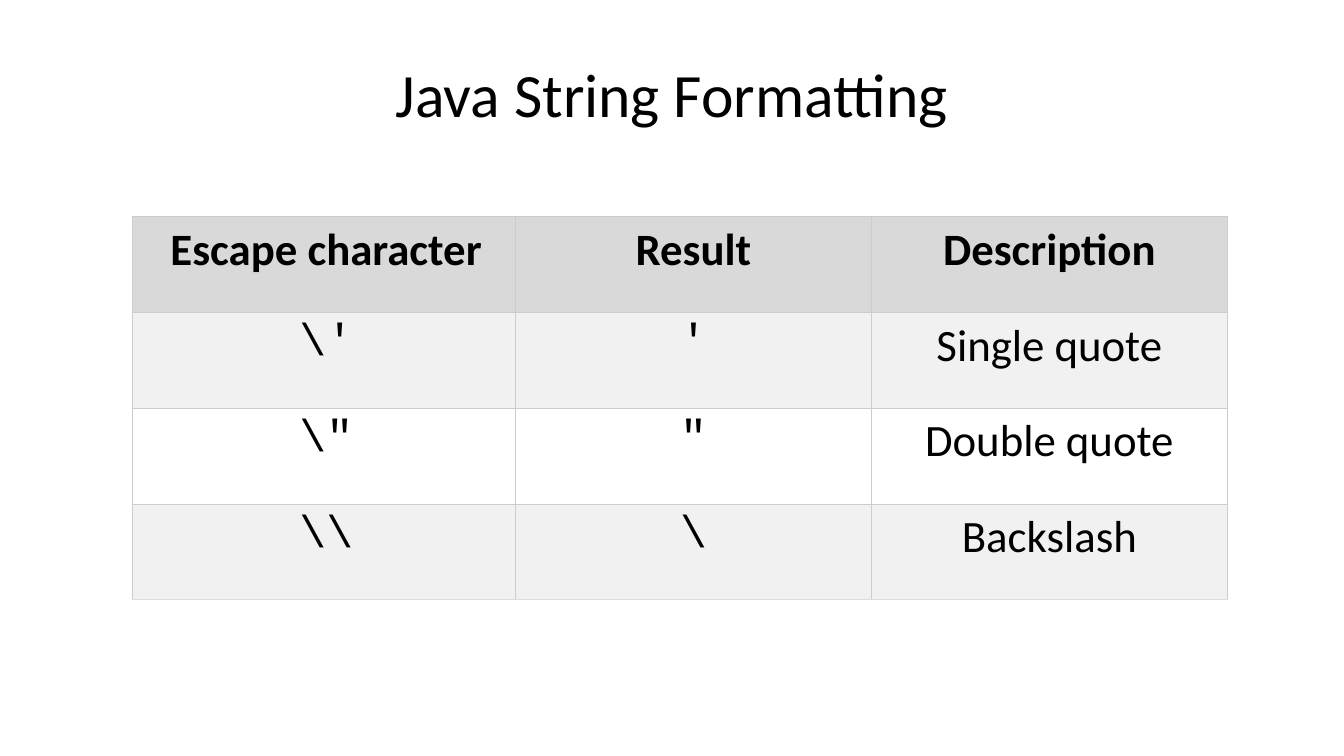
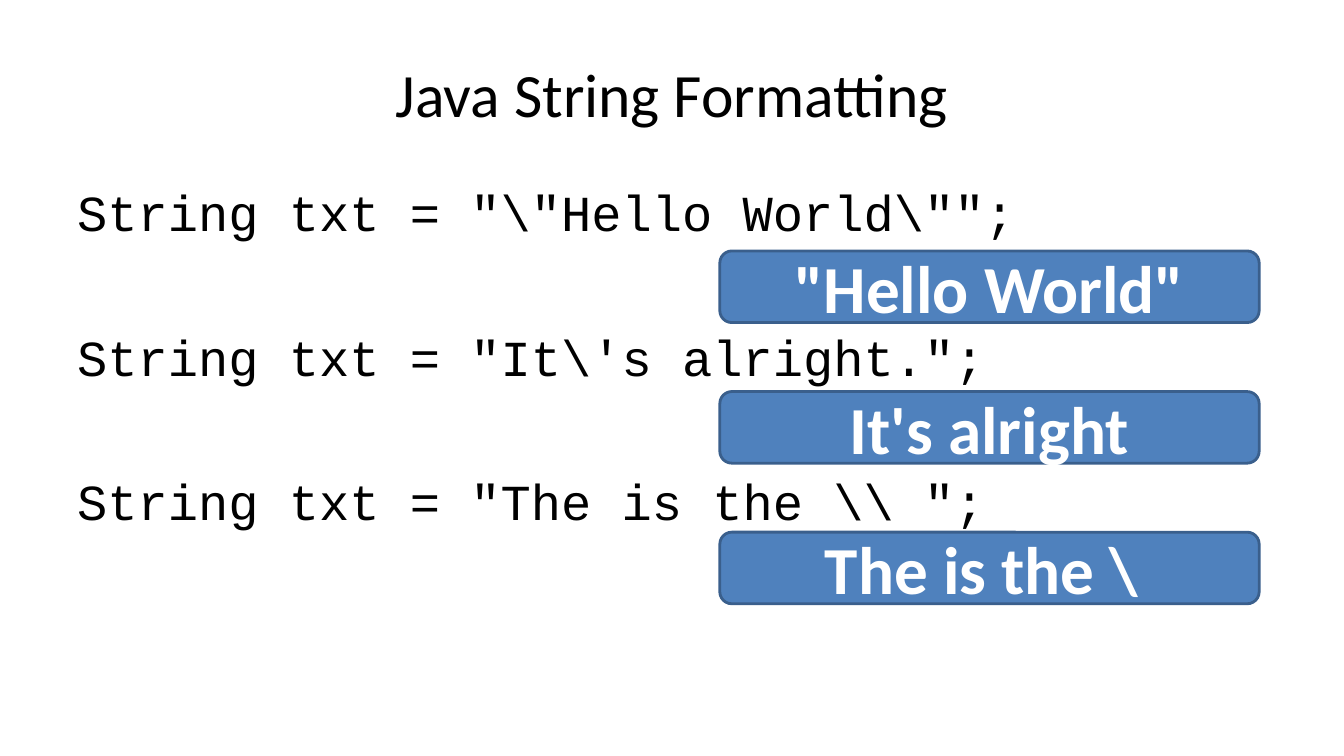
from lxml import etree
from pptx import Presentation
from pptx import util as u
from pptx.dml.color import RGBColor
from pptx.enum import shapes, text
from pptx.oxml import ns

BLACK = RGBColor(0x00, 0x00, 0x00)
WHITE = RGBColor(0xFF, 0xFF, 0xFF)
HEADER_GREY = RGBColor(0xD9, 0xD9, 0xD9)
BAND_GREY = RGBColor(0xF1, 0xF1, 0xF1)
RULE_GREY = RGBColor(0xCC, 0xCC, 0xCC)
BOTTOM_GREY = RGBColor(0xDD, 0xDD, 0xDD)
BLUE = RGBColor(0x4F, 0x81, 0xBD)
DARK_BLUE = RGBColor(0x3A, 0x5F, 0x8C)

BODY_FONT = "Calibri"
CODE_FONT = "Courier New"

HEADING = "Java String Formatting"
ESCAPES = [
    ("Escape character", "Result", "Description"),
    ("\\'", "'", "Single quote"),
    ("\\\"", "\"", "Double quote"),
    ("\\\\", "\\", "Backslash"),
]
EXAMPLES = [
    ("String txt = \"\\\"Hello World\\\"\";", "\"Hello World\""),
    ("String txt = \"It\\'s alright.\";", "It's alright"),
    ("String txt = \"The is the \\\\ \";", "The is the \\ "),
]


class Deck:
    def __init__(self):
        self.prs = Presentation()
        self.prs.slide_width = u.Inches(13.33)
        self.prs.slide_height = u.Inches(7.5)
        self.slide = None

    def across(self, percent):
        return round(self.prs.slide_width * percent / 100)

    def down(self, percent):
        return round(self.prs.slide_height * percent / 100)

    def area(self, left, top, width, height):
        return (self.across(left), self.down(top),
                self.across(width), self.down(height))

    def style(self, paragraph, size, font=BODY_FONT, color=BLACK, bold=False,
              align=text.PP_ALIGN.CENTER):
        paragraph.alignment = align
        for run in paragraph.runs:
            run.font.size = u.Pt(size)
            run.font.name = font
            run.font.bold = bold
            run.font.color.rgb = color

    def new_slide(self, heading):
        self.slide = self.prs.slides.add_slide(self.prs.slide_layouts[6])
        frame = self.slide.shapes.add_textbox(*self.area(5, 4, 90, 16.67)).text_frame
        frame.word_wrap = True
        frame.vertical_anchor = text.MSO_ANCHOR.MIDDLE
        frame.text = heading
        self.style(frame.paragraphs[0], 44)

    def border(self, cell, bottom):
        props = cell._tc.get_or_add_tcPr()
        sides = {"lnL": RULE_GREY, "lnR": RULE_GREY, "lnT": RULE_GREY, "lnB": bottom}
        for place, (side, color) in enumerate(sides.items()):
            line = etree.Element(ns.qn(f"a:{side}"), w=str(u.Pt(0.5)))
            fill = etree.SubElement(line, ns.qn("a:solidFill"))
            etree.SubElement(fill, ns.qn("a:srgbClr"), val=str(color))
            props.insert(place, line)

    def table(self, rows, area, shares):
        table = self.slide.shapes.add_table(len(rows), len(shares), *self.area(*area)).table
        table.horz_banding = False
        for column, share in zip(table.columns, shares):
            column.width = self.across(area[2] * share / 100)
        for r, row in enumerate(rows):
            fill = HEADER_GREY if r == 0 else BAND_GREY if r % 2 else WHITE
            bottom = BOTTOM_GREY if r == len(rows) - 1 else RULE_GREY
            for c, words in enumerate(row):
                cell = table.cell(r, c)
                cell.margin_left = u.Inches(0.06 if c else 0.11)
                cell.margin_top = cell.margin_right = cell.margin_bottom = u.Inches(0.06)
                cell.fill.solid()
                cell.fill.fore_color.rgb = fill
                self.border(cell, bottom)
                cell.text_frame.text = words
                is_code = r > 0 and c < 2
                self.style(cell.text_frame.paragraphs[0], 32,
                           CODE_FONT if is_code else BODY_FONT, bold=r == 0)

    def code(self, statements, area, first_gap, gap):
        frame = self.slide.shapes.add_textbox(*self.area(*area)).text_frame
        frame.word_wrap = True
        frame.text = "\n".join(statements)
        for i, paragraph in enumerate(frame.paragraphs):
            paragraph.space_before = u.Pt(gap if i else first_gap)
            self.style(paragraph, 36, CODE_FONT, align=text.PP_ALIGN.LEFT)

    def output(self, words, area):
        box = self.slide.shapes.add_shape(
            shapes.MSO_SHAPE.ROUNDED_RECTANGLE, *self.area(*area))
        box.shadow.inherit = False
        box.fill.solid()
        box.fill.fore_color.rgb = BLUE
        box.line.color.rgb = DARK_BLUE
        box.line.width = u.Pt(2)
        frame = box.text_frame
        frame.word_wrap = True
        frame.vertical_anchor = text.MSO_ANCHOR.MIDDLE
        frame.text = words
        self.style(frame.paragraphs[0], 48, color=WHITE, bold=True)


def main():
    deck = Deck()

    deck.new_slide(HEADING)
    deck.table(ESCAPES, (9.83, 28.67, 81.5, 50.67), (35, 32.5, 32.5))

    deck.new_slide(HEADING)
    deck.code([statement for statement, _ in EXAMPLES], (5, 23.33, 90, 66),
              first_gap=9, gap=60)
    for i, (_, result) in enumerate(EXAMPLES):
        deck.output(result, (53.56, 33.2 + 18.6 * i, 40.13, 9.47))

    deck.prs.save("out.pptx")


if __name__ == "__main__":
    main()
